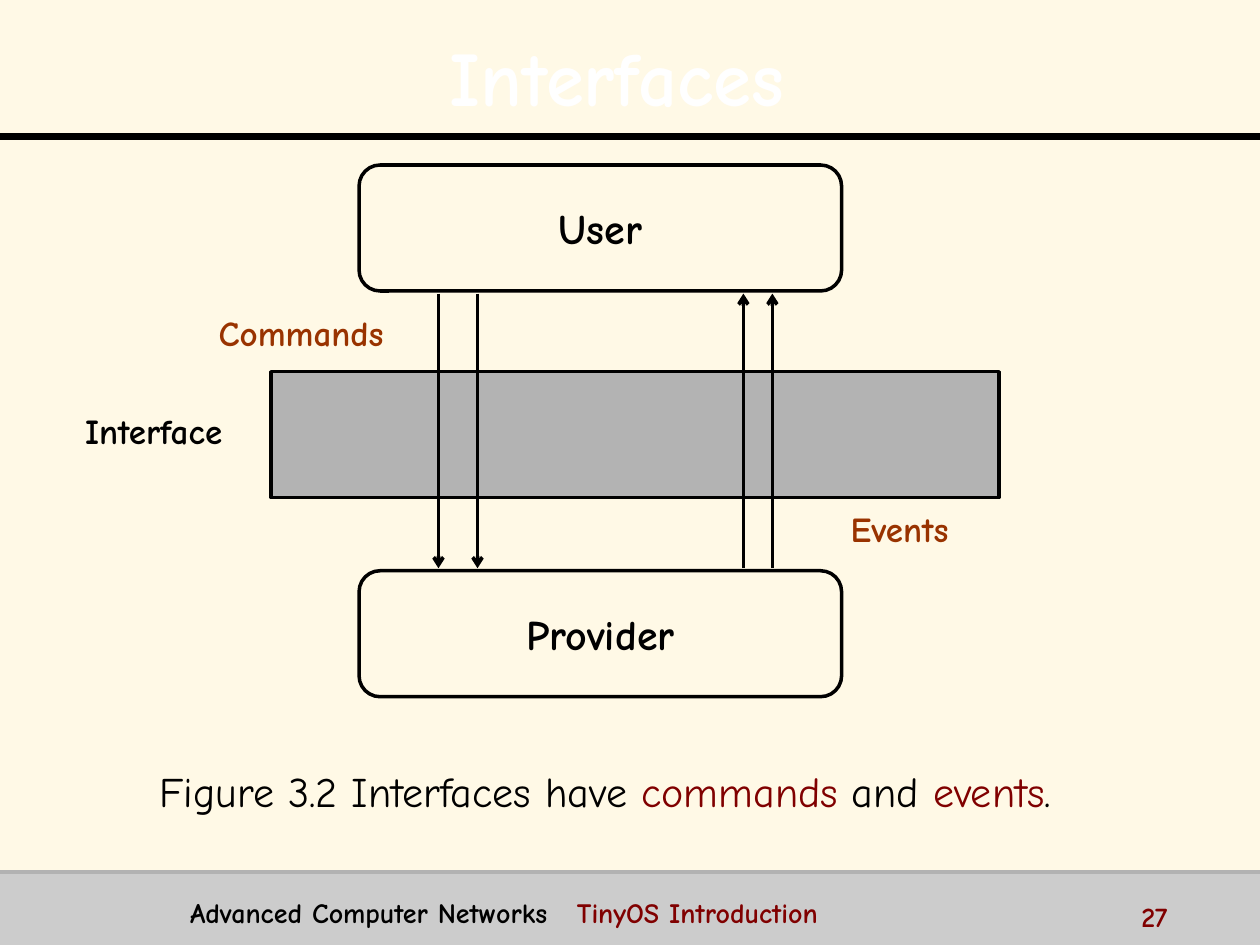
from lxml.etree import SubElement
from pptx import Presentation
from pptx.dml.color import RGBColor
from pptx.enum.shapes import MSO_CONNECTOR, MSO_SHAPE
from pptx.enum.text import MSO_ANCHOR, PP_ALIGN
from pptx.oxml.ns import qn
from pptx.util import Inches, Pt

FONT = "Comic Neue"
CREAM = RGBColor(0xFF, 0xF9, 0xE6)
BLACK = RGBColor(0x00, 0x00, 0x00)
WHITE = RGBColor(0xFF, 0xFF, 0xFF)
FOOTER_GRAY = RGBColor(0xCC, 0xCC, 0xCC)
RULE_GRAY = RGBColor(0xB2, 0xB2, 0xB2)
BAND_GRAY = RGBColor(0xB3, 0xB3, 0xB3)
RUST = RGBColor(0x99, 0x33, 0x00)
MAROON = RGBColor(0x80, 0x00, 0x00)


class SlideBuilder:
    """Holds the style and the current slide."""

    def __init__(self, page):
        self.page = page
        fill = page.background.fill
        fill.solid()
        fill.fore_color.rgb = CREAM

    def fill_text(self, box, spans, size, bold=True, align=PP_ALIGN.CENTER,
                  anchor=MSO_ANCHOR.MIDDLE, wrap=False, tab=None):
        """Fill a box with one paragraph of (text, colour) spans."""
        frame = box.text_frame
        frame.word_wrap = wrap
        frame.vertical_anchor = anchor
        para = frame.paragraphs[0]
        para.alignment = align
        if tab:
            tabs = SubElement(para._p.get_or_add_pPr(), qn("a:tabLst"))
            SubElement(tabs, qn("a:tab"), pos=str(Inches(tab)), algn="l")
        for text, color in spans:
            span = para.add_run()
            span.text = text
            span.font.name = FONT
            span.font.size = Pt(size)
            span.font.bold = bold
            span.font.color.rgb = color
        return para

    def title(self, text, left, top, width, height):
        box = self.page.shapes.title
        box.left, box.top = Inches(left), Inches(top)
        box.width, box.height = Inches(width), Inches(height)
        para = self.fill_text(box, [(text, WHITE)], 44, wrap=True)
        para.line_spacing = 1.1
        # Text shadow
        properties = para.runs[0]._r.get_or_add_rPr()
        effects = properties.makeelement(qn("a:effectLst"))
        properties.find(qn("a:solidFill")).addnext(effects)
        shadow = SubElement(effects, qn("a:outerShdw"), dist="38100", dir="2700000")
        SubElement(shadow, qn("a:srgbClr"), val=str(BLACK))

    def block(self, preset, left, top, width, height, fill=None, line=BLACK, text=None):
        shape = self.page.shapes.add_shape(
            preset, Inches(left), Inches(top), Inches(width), Inches(height))
        shape.shadow.inherit = False
        if fill is None:
            shape.fill.background()
        else:
            shape.fill.solid()
            shape.fill.fore_color.rgb = fill
        if line is None:
            shape.line.fill.background()
        else:
            shape.line.color.rgb = line
            shape.line.width = Pt(2)
        if text:
            self.fill_text(shape, [(text, BLACK)], 24)

    def line(self, x1, y1, x2, y2, color=BLACK, width=2, arrow=False):
        rule = self.page.shapes.add_connector(
            MSO_CONNECTOR.STRAIGHT, Inches(x1), Inches(y1), Inches(x2), Inches(y2))
        rule.line.color.rgb = color
        rule.line.width = Pt(width)
        if arrow:
            SubElement(rule.line._get_or_add_ln(), qn("a:tailEnd"), type="arrow")
        SubElement(rule._element.spPr, qn("a:effectLst"))

    def text(self, spans, left, top, width, height, size, **style):
        box = self.page.shapes.add_textbox(
            Inches(left), Inches(top), Inches(width), Inches(height))
        self.fill_text(box, spans, size, **style)


def main():
    deck = Presentation()
    deck.slide_width, deck.slide_height = Inches(10), Inches(7.5)
    slide = SlideBuilder(deck.slides.add_slide(deck.slide_layouts[5]))

    # Frame: footer band, rules and title
    slide.block(MSO_SHAPE.RECTANGLE, 0, 6.92, 10, 0.58, fill=FOOTER_GRAY, line=None)
    slide.line(0, 1.08, 10, 1.08, width=4)
    slide.line(0, 6.92, 10, 6.92, color=RULE_GRAY)
    slide.title("Interfaces ", 0.2, 0.13, 9.61, 0.87)

    # User and provider, with the interface between them
    for name, top in (("User", 1.31), ("Provider", 4.53)):
        slide.block(MSO_SHAPE.ROUNDED_RECTANGLE, 2.85, top, 3.83, 1, text=name)
    slide.block(MSO_SHAPE.RECTANGLE, 2.15, 2.95, 5.78, 1, fill=BAND_GRAY)

    # Commands go down, events go up
    upper, lower = 2.33, 4.51
    for x in (3.48, 3.79):
        slide.line(x, upper, x, lower, arrow=True)
    for x in (5.9, 6.13):
        slide.line(x, lower, x, upper, arrow=True)

    # Labels
    for label, color, left, top in (("Commands", RUST, 1.54, 2.48),
                                    ("Events", RUST, 6.29, 4.04),
                                    ("Interface", BLACK, 0.37, 3.26)):
        slide.text([(label, color)], left, top, 1.7, 0.31, 20)

    # Footer
    footer_style = dict(align=PP_ALIGN.LEFT, anchor=MSO_ANCHOR.TOP, wrap=True)
    slide.text([("Advanced Computer Networks\t", BLACK), ("TinyOS Introduction", MAROON)],
               1.41, 7.06, 7.28, 0.31, 16, tab=3.07, **footer_style)
    slide.text([("27", MAROON)], 8.96, 7.09, 1, 0.25, 16, **footer_style)

    # Caption
    slide.text([("Figure 3.2 Interfaces have ", BLACK), ("commands", MAROON),
                (" and ", BLACK), ("events", MAROON), (".", BLACK)],
               0.75, 5.88, 8.11, 0.79, 24, bold=False)

    deck.save("out.pptx")


if __name__ == "__main__":
    main()
